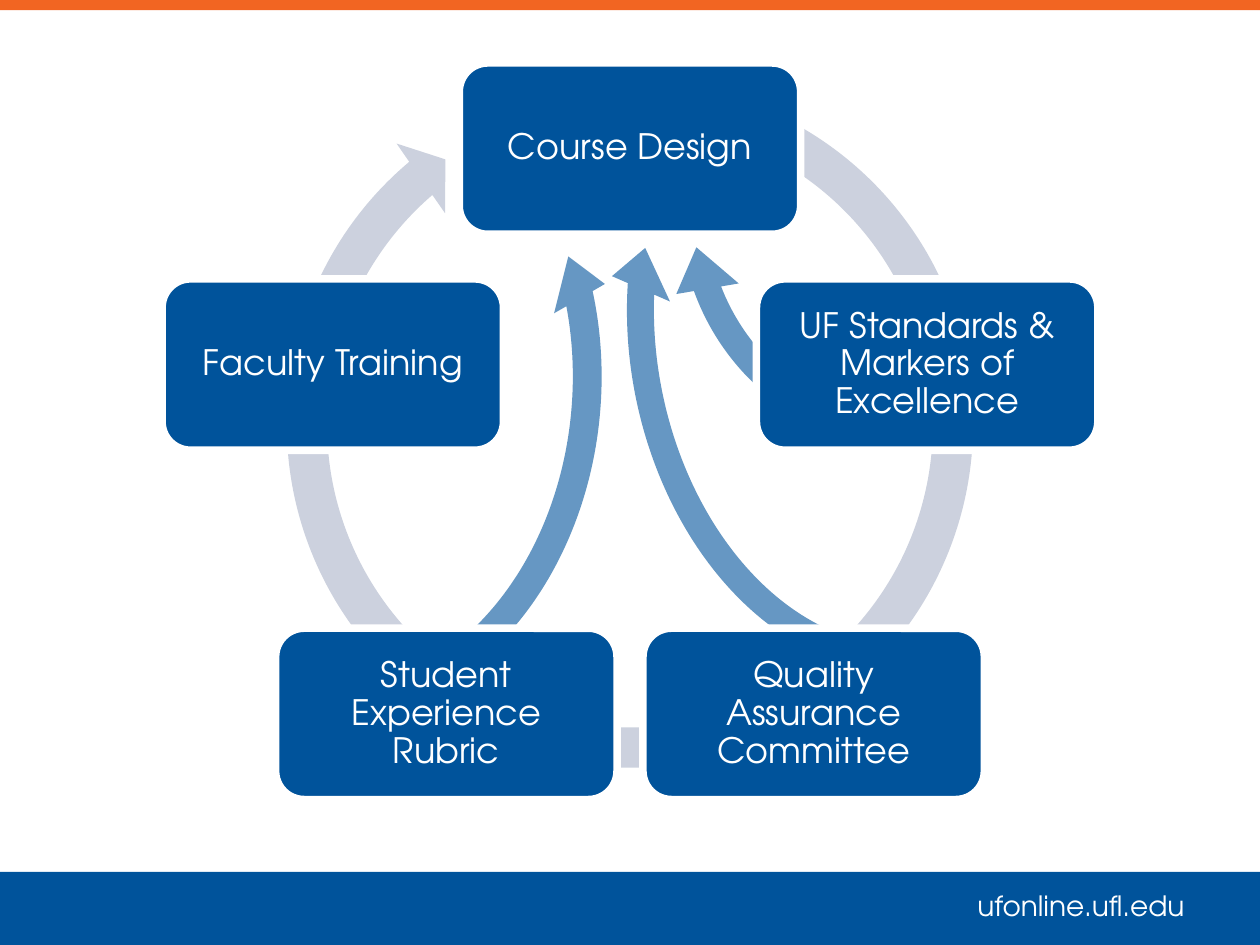
import math

import lxml.etree
import pptx
import pptx.dml.color
import pptx.enum.shapes
import pptx.enum.text
import pptx.oxml.ns
import pptx.util

Inches = pptx.util.Inches
Pt = pptx.util.Pt
RGBColor = pptx.dml.color.RGBColor
Shape = pptx.enum.shapes.MSO_SHAPE
Align = pptx.enum.text.PP_ALIGN

BLUE = RGBColor(0x00, 0x53, 0x9B)
ORANGE = RGBColor(0xF2, 0x65, 0x22)
PALE = RGBColor(0xCC, 0xD1, 0xDE)
WHITE = RGBColor(0xFF, 0xFF, 0xFF)
FONT = "TeX Gyre Adventor"


def add_filled(kind, left, top, width, height, color):
    shape = page.shapes.add_shape(
        kind, Inches(left), Inches(top), Inches(width), Inches(height))
    shape.shadow.inherit = False
    shape.fill.solid()
    shape.fill.fore_color.rgb = color
    shape.line.fill.background()
    return shape


def write_text(shape, text, size, align, inset, line_spacing=1.0):
    frame = shape.text_frame
    frame.word_wrap = True
    frame.margin_left = frame.margin_right = Inches(inset)
    para = frame.paragraphs[0]
    para.alignment = align
    para.line_spacing = line_spacing
    span = para.add_run()
    span.text = text
    span.font.name = FONT
    span.font.size = Pt(size)
    span.font.color.rgb = WHITE


deck = pptx.Presentation()
deck.slide_width = Inches(10)
deck.slide_height = Inches(7.5)
page = deck.slides.add_slide(deck.slide_layouts[6])

# Top and bottom bands
add_filled(Shape.RECTANGLE, 0, 0, 10, 0.08, ORANGE)
add_filled(Shape.RECTANGLE, 0, 6.92, 10, 0.58, BLUE)
address = page.shapes.add_textbox(Inches(7.5), Inches(7), Inches(2), Inches(0.37))
write_text(address, "ufonline.ufl.edu", size=16, align=Align.RIGHT, inset=0.1)

# Arrows: place, rotation, mirrored, adjustments, colour, opacity in percent
arrows = [
    ((5.25, -0.4, 4.12, 4.12), 314.6, False,
     (0.052, 6.486, 122.974, 97.613, 0.061), BLUE, 60),
    ((4.86, 0.01, 4.12, 5.49), 349.2, False,
     (0.052, 5.682, 122.974, 63.35, 0.061), BLUE, 60),
    ((0.5, 0.34, 4.39, 5.49), 4.4, True,
     (0.052, 5.682, 122.974, 63.35, 0.053), BLUE, 60),
    ((2.1, 0.47, 5.8, 5.8), 0, False,
     (0.055, 3.307, 137.795, 173.838, 0.058), PALE, 100),
]
for place, rotation, mirrored, adjustments, color, opacity in arrows:
    arrow = add_filled(Shape.CIRCULAR_ARROW, *place, color)
    arrow.rotation = rotation
    for index, value in enumerate(adjustments):
        arrow.adjustments[index] = value
    properties = arrow._element.spPr
    if mirrored:
        properties.find(pptx.oxml.ns.qn("a:xfrm")).set("flipH", "1")
    if opacity < 100:
        fill_color = properties.find(".//" + pptx.oxml.ns.qn("a:srgbClr"))
        alpha = lxml.etree.SubElement(fill_color, pptx.oxml.ns.qn("a:alpha"))
        alpha.set("val", str(opacity * 1000))

# Five steps, evenly spaced clockwise from the top of the cycle
STEP_WIDTH, STEP_HEIGHT = 2.65, 1.3
STEP_WIDTH, STEP_HEIGHT = 2.71, 1.36
CENTER_X, CENTER_Y, RADIUS = 5, 3.66, 2.48
steps = [
    "Course Design",
    "UF Standards & Markers of Excellence",
    "Quality Assurance Committee",
    "Student Experience Rubric",
    "Faculty Training",
]
for index, label in enumerate(steps):
    angle = 2 * math.pi * index / len(steps)
    left = CENTER_X + RADIUS * math.sin(angle) - STEP_WIDTH / 2
    top = CENTER_Y - RADIUS * math.cos(angle) - STEP_HEIGHT / 2
    step = add_filled(Shape.ROUNDED_RECTANGLE, left, top, STEP_WIDTH, STEP_HEIGHT, BLUE)
    step.line.color.rgb = WHITE
    step.line.width = Pt(4.33)
    step.text_frame.vertical_anchor = pptx.enum.text.MSO_ANCHOR.MIDDLE
    write_text(step, label, size=20, align=Align.CENTER, inset=0.08, line_spacing=0.9)

deck.save("out.pptx")
